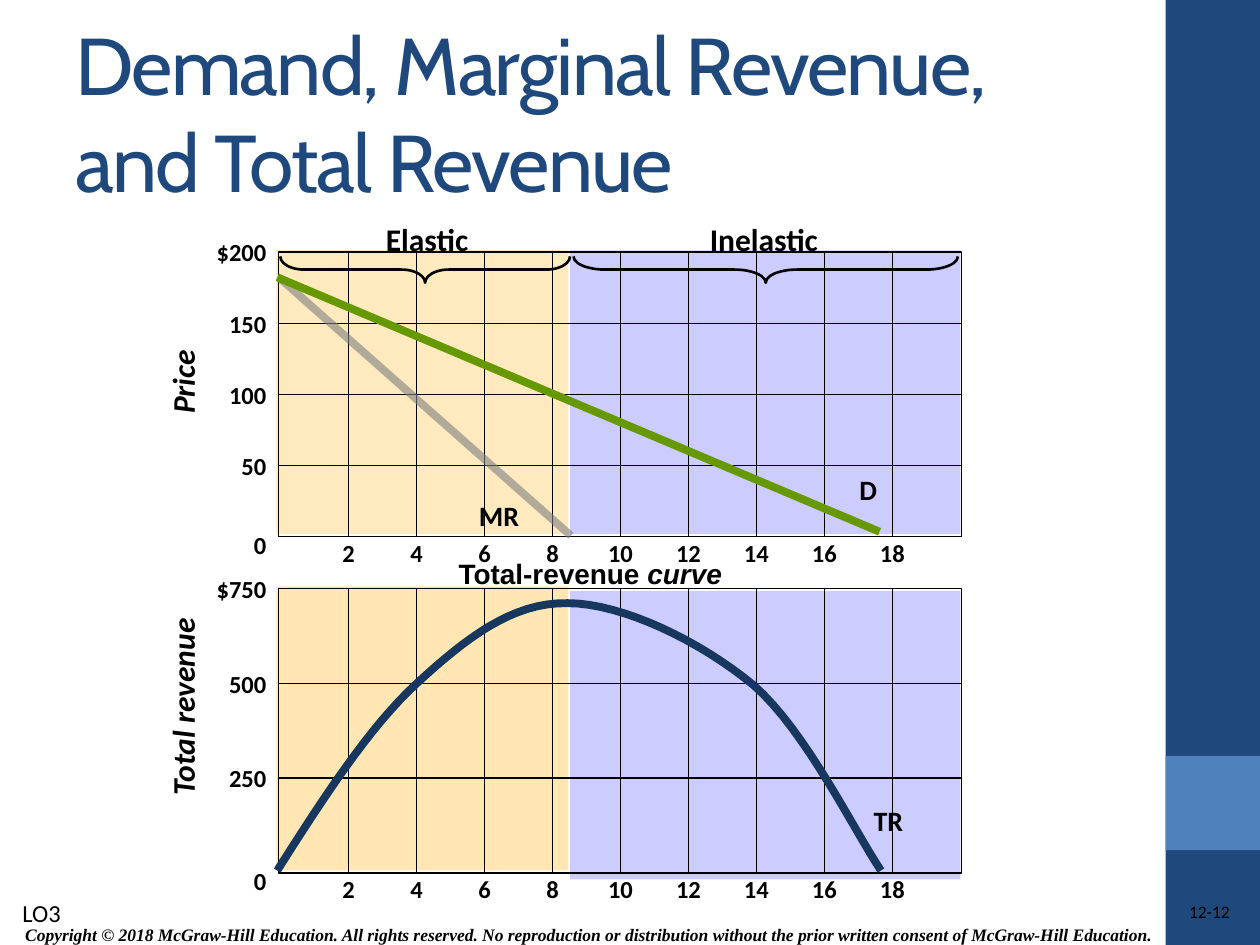
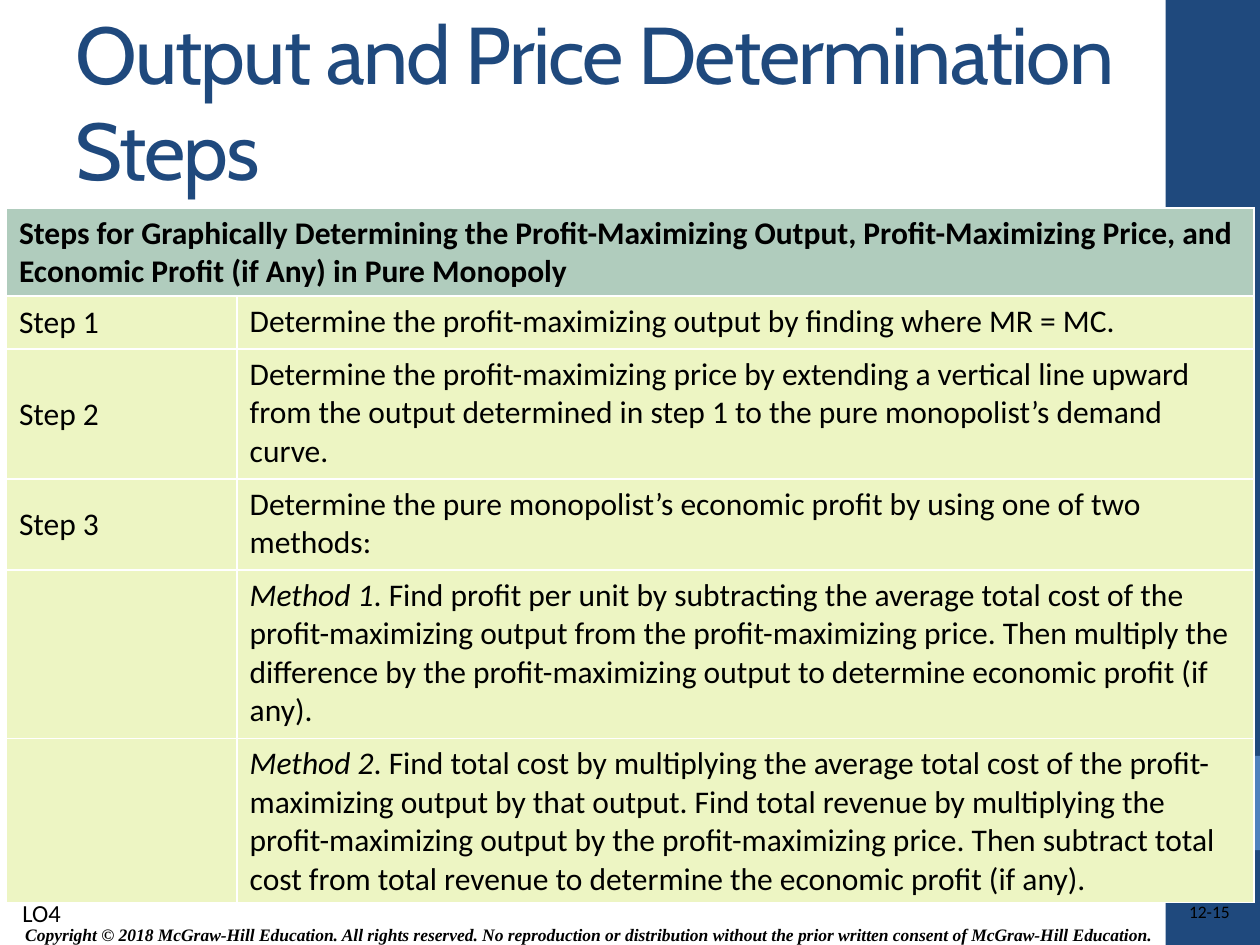
from lxml.etree import SubElement
from pptx import Presentation
from pptx.dml.color import RGBColor
from pptx.enum.shapes import MSO_CONNECTOR, MSO_SHAPE
from pptx.enum.text import MSO_ANCHOR, PP_ALIGN
from pptx.oxml.ns import qn
from pptx.util import Cm, Pt

BLACK = RGBColor(0x00, 0x00, 0x00)
WHITE = RGBColor(0xFF, 0xFF, 0xFF)
NAVY = RGBColor(0x1F, 0x49, 0x7D)
BLUE = RGBColor(0x4F, 0x81, 0xBD)
ELASTIC = RGBColor(0xFF, 0xE6, 0xB3)
INELASTIC = RGBColor(0xCC, 0xCC, 0xFF)
DEMAND = RGBColor(0x66, 0x99, 0x00)
MARGINAL = RGBColor(0x80, 0x80, 0x80)
REVENUE = RGBColor(0x17, 0x37, 0x5E)
TABLE_HEAD = RGBColor(0xB0, 0xCC, 0xBD)
TABLE_BODY = RGBColor(0xED, 0xF5, 0xC3)

SLIDE_WIDTH, SLIDE_HEIGHT = 25.4, 19.05
BAND_LEFT, BAND_WIDTH = 23.5, 1.9
COPYRIGHT = ("Copyright © 2018 McGraw-Hill Education. All rights reserved. No reproduction or "
             "distribution without the prior written consent of McGraw-Hill Education.")

PLOT_LEFT, PLOT_WIDTH, PLOT_HEIGHT = 5.62, 13.76, 5.74
FIRST_TICK, TICK_GAP = 1.41, 1.37
QUANTITIES = range(2, 20, 2)
CURVE_START = (-0.03, 5.69)
CURVE_SEGMENTS = [
    ((0.89, 4.24), (1.83, 2.79), (2.79, 1.91)),
    ((3.76, 1.02), (4.7, 0.28), (5.82, 0.3)),
    ((6.93, 0.3), (8.51, 1.07), (9.58, 1.96)),
    ((10.62, 2.87), (11.61, 4.9), (12.14, 5.69)),
]

STEPS = [
    ("Step 1", ["Determine the profit-maximizing output by finding where MR = MC."]),
    ("Step 2", ["Determine the profit-maximizing price by extending a vertical line upward from "
                "the output determined in step 1 to the pure monopolist’s demand curve."]),
    ("Step 3", ["Determine the pure monopolist’s economic profit by using one of two methods:"]),
    ("", [("Method 1", True),
          ". Find profit per unit by subtracting the average total cost of the "
          "profit-maximizing output from the profit-maximizing price. Then multiply the "
          "difference by the profit-maximizing output to determine economic profit (if any)."]),
    ("", [("Method 2", True),
          ". Find total cost by multiplying the average total cost of the profit-maximizing "
          "output by that output. Find total revenue by multiplying the profit-maximizing "
          "output by the profit-maximizing price. Then subtract total cost from total revenue "
          "to determine the economic profit (if any)."]),
]
ROW_HEIGHTS = [1.78, 1.07, 2.62, 1.83, 3.4, 3.3]


def write(frame, runs, size=18, font="Calibri", color=BLACK, bold=False, italic=False,
          align=PP_ALIGN.LEFT, spacing=None):
    """Fill a text frame; a run is plain text or a (text, italic) pair."""
    paragraph = frame.paragraphs[0]
    paragraph.alignment = align
    for item in [runs] if isinstance(runs, str) else runs:
        text, slanted = (item, italic) if isinstance(item, str) else item
        run = paragraph.add_run()
        run.text = text
        run.font.name, run.font.size = font, Pt(size)
        run.font.bold, run.font.italic = bold, slanted
        run.font.color.rgb = color
        if spacing is not None:
            run._r.get_or_add_rPr().set("spc", str(spacing))


def add_text(slide, box, runs, anchor=MSO_ANCHOR.TOP, margins=True, rotation=0, **style):
    shape = slide.shapes.add_textbox(*map(Cm, box))
    shape.rotation = rotation
    frame = shape.text_frame
    frame.word_wrap = True
    frame.vertical_anchor = anchor
    if not margins:
        frame.margin_left = frame.margin_right = frame.margin_top = frame.margin_bottom = 0
    write(frame, runs, **style)


def add_centered(slide, center, top, runs, width=4, **style):
    add_text(slide, (center - width / 2, top, width, 0.9), runs,
             align=PP_ALIGN.CENTER, **style)


def set_alpha(element, percent):
    color = next(element.iter(qn("a:srgbClr")))
    SubElement(color, qn("a:alpha")).set("val", str(percent * 1000))


def add_shape(slide, kind, box, fill=None, line=None, alpha=None):
    """Add a preset shape; line is its width in points."""
    shape = slide.shapes.add_shape(kind, *map(Cm, box))
    shape.shadow.inherit = False
    if fill is None:
        shape.fill.background()
    else:
        shape.fill.solid()
        shape.fill.fore_color.rgb = fill
    if line is None:
        shape.line.fill.background()
    else:
        shape.line.color.rgb = BLACK
        shape.line.width = Pt(line)
    if alpha is not None:
        set_alpha(shape._element.spPr, alpha)
    return shape


def add_line(slide, start, end, color=BLACK, width=0.75, alpha=None):
    line = slide.shapes.add_connector(MSO_CONNECTOR.STRAIGHT, *map(Cm, start + end))
    line.line.color.rgb = color
    line.line.width = Pt(width)
    properties = line._element.spPr
    if alpha is not None:
        set_alpha(properties, alpha)
    SubElement(properties, qn("a:effectLst"))


def add_frame(slide, title, title_box, objective, number):
    """Draw the side band, footers and title."""
    add_shape(slide, MSO_SHAPE.RECTANGLE, (BAND_LEFT, 0, BAND_WIDTH, SLIDE_HEIGHT), NAVY)
    add_shape(slide, MSO_SHAPE.RECTANGLE, (BAND_LEFT, 15.24, BAND_WIDTH, BAND_WIDTH), BLUE)
    add_text(slide, (0.15, 18.49, 23.42, 0.71), COPYRIGHT, anchor=MSO_ANCHOR.MIDDLE, size=10,
             font="Times New Roman", bold=True, italic=True, align=PP_ALIGN.CENTER)
    add_text(slide, (19.84, 18.16, 4.95, 0.51), number, margins=False, size=10,
             align=PP_ALIGN.RIGHT)
    add_text(slide, title_box, title, anchor=MSO_ANCHOR.MIDDLE, size=46, font="Cabin",
             color=NAVY, spacing=-100)
    add_text(slide, (0.2, 17.98, 1.5, 0.86), objective, size=14)


def add_plot(slide, top, prices, axis_title, axis_center, inelastic_top, inelastic_height):
    """Draw the shaded regions, grid, tick labels and axis title of one graph."""
    bottom = top + PLOT_HEIGHT
    right = PLOT_LEFT + PLOT_WIDTH
    add_shape(slide, MSO_SHAPE.RECTANGLE,
              (PLOT_LEFT + 5.87, top + inelastic_top, 7.87, inelastic_height), INELASTIC)
    add_shape(slide, MSO_SHAPE.RECTANGLE, (PLOT_LEFT - 0.05, top - 0.04, 5.89, 5.73),
              ELASTIC, alpha=82 if inelastic_top < 0 else None)
    add_shape(slide, MSO_SHAPE.RECTANGLE, (PLOT_LEFT, top, PLOT_WIDTH, PLOT_HEIGHT), line=0.75)

    row_gap = PLOT_HEIGHT / (len(prices) - 1)
    for index, price in enumerate(prices):
        y = top + index * row_gap
        if 0 < index < len(prices) - 1:
            add_line(slide, (PLOT_LEFT, y), (right, y))
        drop = 0.15 if price == "0" else 0
        add_text(slide, (PLOT_LEFT - 2.12, y - 0.42 + drop, 2.12, 0.84), price, size=14,
                 bold=True, align=PP_ALIGN.RIGHT)
    for index, quantity in enumerate(QUANTITIES):
        x = PLOT_LEFT + FIRST_TICK + index * TICK_GAP
        add_line(slide, (x, bottom), (x, top))
        add_centered(slide, x, bottom - 0.1, str(quantity), width=1.3, size=14, bold=True)
    add_text(slide, (PLOT_LEFT - 4.19, top + axis_center - 0.51, 4.5, 1.02), axis_title,
             rotation=270, bold=True, italic=True, align=PP_ALIGN.CENTER)


def add_brace(slide, left, top, width, bend, depth=0.53):
    """Add a downward brace by turning a right brace about its centre."""
    center = left + width / 2
    brace = add_shape(slide, MSO_SHAPE.RIGHT_BRACE,
                      (center - depth / 2, top + depth / 2 - width / 2, depth, width), line=1.5)
    brace.adjustments[0] = bend
    brace.rotation = 90


def add_price_graph(slide, top):
    add_plot(slide, top, ["$200", "150", "100", "50", "0"], "Price", 2.62, -0.03, 5.72)
    for start, end, color, alpha in [((0, 0.51), (5.89, 5.72), MARGINAL, 60),
                                     ((-0.03, 0.51), (12.11, 5.64), DEMAND, None)]:
        add_line(slide, (PLOT_LEFT + start[0], top + start[1]),
                 (PLOT_LEFT + end[0], top + end[1]), color, 4.5, alpha)
    for label, center, offset, size in [("Elastic", 2.99, -0.76, 18),
                                        ("Inelastic", 9.78, -0.76, 18),
                                        ("D", 11.88, 4.32, 16), ("MR", 4.44, 4.85, 16)]:
        add_centered(slide, PLOT_LEFT + center, top + offset, label, size=size, bold=True)
    add_brace(slide, PLOT_LEFT + 0.03, top + 0.09, 5.84, 0.896)
    add_brace(slide, PLOT_LEFT + 5.94, top + 0.09, 7.75, 1.189)


def curve_points(start, segments, count=16):
    """Yield points along joined cubic Bézier segments."""
    for first, second, end in segments:
        for step in range(1, count + 1):
            t = step / count
            u = 1 - t
            yield tuple(u**3 * a + 3 * u * u * t * b + 3 * u * t * t * c + t**3 * d
                        for a, b, c, d in zip(start, first, second, end))
        start = end


def add_revenue_graph(slide, top):
    add_plot(slide, top, ["$750", "500", "250", "0"], "Total revenue", 2.39, 0.05, 5.82)

    def place(point):
        return Cm(PLOT_LEFT + point[0]), Cm(top + point[1])

    builder = slide.shapes.build_freeform(*place(CURVE_START))
    builder.add_line_segments(map(place, curve_points(CURVE_START, CURVE_SEGMENTS)), close=False)
    curve = builder.convert_to_shape()
    curve.shadow.inherit = False
    curve.fill.background()
    curve.line.color.rgb = REVENUE
    curve.line.width = Pt(4.5)
    add_centered(slide, PLOT_LEFT + 6.28, top - 0.76, ["Total-revenue", (" curve", True)],
                 width=7, size=16, font="Arial", bold=True)
    add_centered(slide, PLOT_LEFT + 12.29, top + 4.22, "TR", size=16, bold=True)


def set_borders(cell, color=WHITE, width=1):
    properties = cell._tc.get_or_add_tcPr()
    for index, side in enumerate(("a:lnL", "a:lnR", "a:lnT", "a:lnB")):
        line = SubElement(properties, qn(side), w=str(Pt(width)))
        fill = SubElement(line, qn("a:solidFill"))
        SubElement(fill, qn("a:srgbClr"), val=str(color))
        properties.insert(index, line)


def fill_cell(cell, runs, fill, anchor=MSO_ANCHOR.TOP, bold=False):
    cell.fill.solid()
    cell.fill.fore_color.rgb = fill
    cell.vertical_anchor = anchor
    if runs:
        write(cell.text_frame, runs, bold=bold)


def add_steps_table(slide, left, top, widths):
    table = slide.shapes.add_table(len(ROW_HEIGHTS), len(widths), Cm(left), Cm(top),
                                   Cm(sum(widths)), Cm(sum(ROW_HEIGHTS))).table
    table.horz_banding = False
    for column, width in zip(table.columns, widths):
        column.width = Cm(width)
    for row, height in zip(table.rows, ROW_HEIGHTS):
        row.height = Cm(height)
    heading = table.cell(0, 0)
    heading.merge(table.cell(0, 1))
    fill_cell(heading, "Steps for Graphically Determining the Profit-Maximizing Output, "
              "Profit-Maximizing Price, and Economic Profit (if Any) in Pure Monopoly",
              TABLE_HEAD, bold=True)
    for index, (step, description) in enumerate(STEPS, start=1):
        fill_cell(table.cell(index, 0), step, TABLE_BODY, MSO_ANCHOR.MIDDLE)
        fill_cell(table.cell(index, 1), description, TABLE_BODY)
        for column in range(2):
            set_borders(table.cell(index, column))


def main():
    presentation = Presentation()
    presentation.slide_width, presentation.slide_height = Cm(SLIDE_WIDTH), Cm(SLIDE_HEIGHT)
    blank = presentation.slide_layouts[6]

    graphs = presentation.slides.add_slide(blank)
    add_frame(graphs, "Demand, Marginal Revenue, and Total Revenue",
              (1.27, 0.76, 21.16, 3), "LO3", "12-12")
    add_price_graph(graphs, 5.08)
    add_revenue_graph(graphs, 11.86)

    steps = presentation.slides.add_slide(blank)
    add_frame(steps, "Output and Price Determination Steps",
              (1.27, 0.43, 22.23, 3.18), "LO4", "12-15")
    add_steps_table(steps, 0.13, 4.19, [4.65, 20.5])

    presentation.save("out.pptx")


if __name__ == "__main__":
    main()
